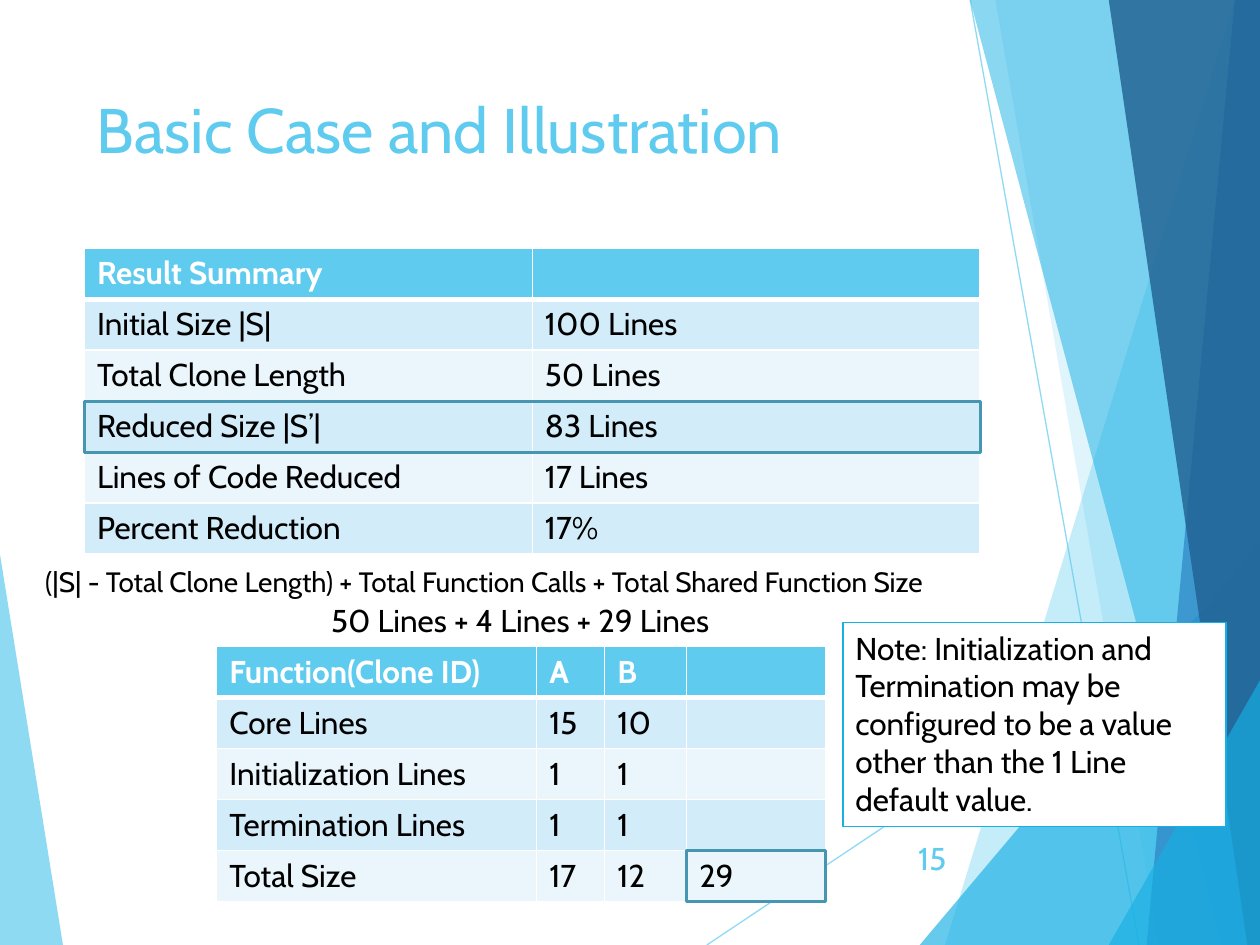
"""Build the clone reduction result slide on a grid of 100 columns by 75 rows."""
from dataclasses import dataclass
from typing import NamedTuple, Optional

from lxml import etree
from pptx import Presentation
from pptx import util as u
from pptx.dml.color import RGBColor
from pptx.enum import shapes, text
from pptx.oxml import ns

COLUMNS, ROWS = 100, 75
CELL = u.Inches(0.1)


@dataclass(frozen=True)
class Theme:
    font: str = "Cabin"
    sky: str = "5FCBEF"
    cyan: str = "17B0E4"
    blue: str = "2E83C3"
    navy: str = "226292"
    frame: str = "4696B1"
    white: str = "FFFFFF"
    black: str = "000000"
    bands: tuple = ("D2ECF9", "EAF6FC")
    title: int = 36
    body: int = 18
    formula: int = 16
    hairline: float = 0.75
    outline: float = 1.5
    grid_line: int = 1
    header_line: int = 3


class Box(NamedTuple):
    left: float
    top: float
    width: float
    height: float


class Wedge(NamedTuple):
    color: str
    opacity: int
    corners: tuple


class Ray(NamedTuple):
    start: tuple
    end: tuple


class Label(NamedTuple):
    box: Box
    lines: tuple
    size: int
    color: str
    align: text.PP_ALIGN = text.PP_ALIGN.LEFT
    anchor: text.MSO_ANCHOR = text.MSO_ANCHOR.TOP


class Grid(NamedTuple):
    left: float
    top: float
    widths: tuple
    row_height: float
    rows: tuple

    def span(self, row: int, first: int, last: int) -> Box:
        """Return the box of the cells first to last in one row."""
        return Box(self.left + sum(self.widths[:first]), self.top + row * self.row_height,
                   sum(self.widths[first:last + 1]), self.row_height)


THEME = Theme()
LEFT_WEDGE = Wedge(THEME.sky, 70, ((0, 43.9), (4.9, ROWS), (0, ROWS)))
RAYS = (Ray((56.1, ROWS), (COLUMNS, 45.7)), Ray((77, 0), (90.4, ROWS)))
RIGHT_WEDGES = (
    Wedge(THEME.sky, 36, ((97.5, 0), (75.4, ROWS), (COLUMNS, ROWS), (COLUMNS, 0))),
    Wedge(THEME.sky, 20, ((78.8, 0), (91.9, ROWS), (COLUMNS, ROWS), (COLUMNS, 0))),
    Wedge(THEME.cyan, 66, ((72.6, ROWS), (COLUMNS, 42.9), (COLUMNS, ROWS))),
    Wedge(THEME.cyan, 50, ((76.7, 0), (97, ROWS), (COLUMNS, ROWS), (COLUMNS, 0))),
    Wedge(THEME.blue, 70, ((98.1, 0), (90.7, ROWS), (COLUMNS, ROWS), (COLUMNS, 0))),
    Wedge(THEME.navy, 82, ((88.5, 0), (98.8, ROWS), (COLUMNS, ROWS), (COLUMNS, 0))),
    Wedge(THEME.cyan, 66, ((88.2, ROWS), (COLUMNS, 53.5), (COLUMNS, ROWS))),
)
SUMMARY = Grid(6.7, 19.7, (35.55, 35.55), 4.05, (
    ("Result Summary", ""),
    ("Initial Size |S|", "100 Lines"),
    ("Total Clone Length", "50 Lines"),
    ("Reduced Size |S’|", "83 Lines"),
    ("Lines of Code Reduced", "17 Lines"),
    ("Percent Reduction", "17%"),
))
FUNCTIONS = Grid(17.2, 51.3, (25.4, 5.4, 6.5, 11), 4.05, (
    ("Function(Clone ID)", "A", "B", ""),
    ("Core Lines", "15", "10", ""),
    ("Initialization Lines", "1", "1", ""),
    ("Termination Lines", "1", "1", ""),
    ("Total Size", "17", "12", "29"),
))
LABELS = (
    Label(Box(6.7, 6.7, 69.4, 14.4), ("Basic Case and Illustration",), THEME.title, THEME.sky),
    Label(Box(70.5, 66.1, 5.6, 4), ("15",), THEME.body, THEME.sky,
          text.PP_ALIGN.RIGHT, text.MSO_ANCHOR.MIDDLE),
    Label(Box(2.6, 44.3, 79.5, 3.7),
          ("(|S| - Total Clone Length) + Total Function Calls + Total Shared Function Size",),
          THEME.formula, THEME.black),
    Label(Box(25.3, 47.2, 34, 4), ("50 Lines + 4 Lines + 29 Lines",), THEME.body, THEME.black),
)
NOTE = Label(Box(66.9, 49.4, 30.4, 16.2), (
    "Note: Initialization and", "Termination may be", "configured to be a value",
    "other than the 1 Line", "default value."), THEME.body, THEME.black)


def cells(length: float) -> int:
    """Convert grid cells to slide units."""
    return round(length * CELL)


def paint(target, color: str, opacity: int = 100) -> None:
    """Give a shape or table cell a solid fill."""
    target.fill.solid()
    target.fill.fore_color.rgb = RGBColor.from_string(color)
    if opacity < 100:
        fade(target, opacity)


def fade(shape, opacity: int) -> None:
    """Set the opacity of the colour of a shape or line."""
    color = next(shape._element.spPr.iter(ns.qn("a:srgbClr")))
    etree.SubElement(color, ns.qn("a:alpha"), val=str(opacity * 1000))


def stroke(shape, color: str, width: float) -> None:
    """Set the line of a shape."""
    shape.line.color.rgb = RGBColor.from_string(color)
    shape.line.width = u.Pt(width)


def draw_wedge(slide, wedge: Wedge) -> None:
    """Draw one translucent background polygon."""
    builder = slide.shapes.build_freeform(*wedge.corners[0], scale=CELL)
    builder.add_line_segments(wedge.corners[1:], close=True)
    shape = builder.convert_to_shape()
    shape.shadow.inherit = False
    paint(shape, wedge.color, wedge.opacity)
    shape.line.fill.background()


def draw_ray(slide, ray: Ray) -> None:
    """Draw one thin background line."""
    line = slide.shapes.add_connector(
        shapes.MSO_CONNECTOR.STRAIGHT, *map(cells, ray.start + ray.end))
    stroke(line, THEME.sky, THEME.hairline)
    fade(line, 70)
    etree.SubElement(line._element.spPr, ns.qn("a:effectLst"))


def draw_rectangle(slide, box: Box, color: str, width: float, fill: Optional[str] = None):
    """Draw an outlined rectangle, hollow unless a fill is given."""
    shape = slide.shapes.add_shape(shapes.MSO_SHAPE.RECTANGLE, *map(cells, box))
    shape.shadow.inherit = False
    shape.fill.background()
    if fill:
        paint(shape, fill)
    stroke(shape, color, width)
    return shape


def style_paragraph(paragraph, size: int, color: str, bold: bool = False) -> None:
    """Set the font of a paragraph."""
    font = paragraph.font
    font.name, font.size, font.bold = THEME.font, u.Pt(size), bold
    font.color.rgb = RGBColor.from_string(color)


def write_label(shape, label: Label) -> None:
    """Write the lines of a label into a shape."""
    frame = shape.text_frame
    frame.word_wrap = True
    frame.vertical_anchor = label.anchor
    frame.text = "\n".join(label.lines)
    for paragraph in frame.paragraphs:
        paragraph.alignment = label.align
        style_paragraph(paragraph, label.size, label.color)


def border_cell(cell, row: int) -> None:
    """Draw white borders, heavier below the header row."""
    heavy = {0: "lnB", 1: "lnT"}.get(row)
    properties = cell._tc.get_or_add_tcPr()
    for index, side in enumerate(("lnL", "lnR", "lnT", "lnB")):
        width = THEME.header_line if side == heavy else THEME.grid_line
        line = etree.Element(ns.qn(f"a:{side}"), w=str(u.Pt(width)))
        fill = etree.SubElement(line, ns.qn("a:solidFill"))
        etree.SubElement(fill, ns.qn("a:srgbClr"), val=THEME.white)
        properties.insert(index, line)


def draw_table(slide, grid: Grid) -> None:
    """Draw a table with a header row and banded body rows."""
    count = len(grid.rows)
    box = Box(grid.left, grid.top, sum(grid.widths), count * grid.row_height)
    table = slide.shapes.add_table(count, len(grid.widths), *map(cells, box)).table
    for column, width in zip(table.columns, grid.widths):
        column.width = cells(width)
    for row, values in enumerate(grid.rows):
        header = row == 0
        for column, value in enumerate(values):
            cell = table.cell(row, column)
            cell.text = value
            paint(cell, THEME.sky if header else THEME.bands[(row - 1) % 2])
            border_cell(cell, row)
            style_paragraph(cell.text_frame.paragraphs[0], THEME.body,
                            THEME.white if header else THEME.black, header)


def main() -> None:
    """Build and save the slide."""
    presentation = Presentation()
    presentation.slide_width, presentation.slide_height = cells(COLUMNS), cells(ROWS)
    slide = presentation.slides.add_slide(presentation.slide_layouts[6])
    draw_wedge(slide, LEFT_WEDGE)
    for ray in RAYS:
        draw_ray(slide, ray)
    for wedge in RIGHT_WEDGES:
        draw_wedge(slide, wedge)
    for label in LABELS:
        write_label(slide.shapes.add_textbox(*map(cells, label.box)), label)
    for grid, marked in ((SUMMARY, (3, 0, 1)), (FUNCTIONS, (4, 3, 3))):
        draw_table(slide, grid)
        draw_rectangle(slide, grid.span(*marked), THEME.frame, THEME.outline)
    note = draw_rectangle(slide, NOTE.box, THEME.cyan, THEME.hairline, THEME.white)
    write_label(note, NOTE)
    presentation.save("out.pptx")


if __name__ == "__main__":
    main()
